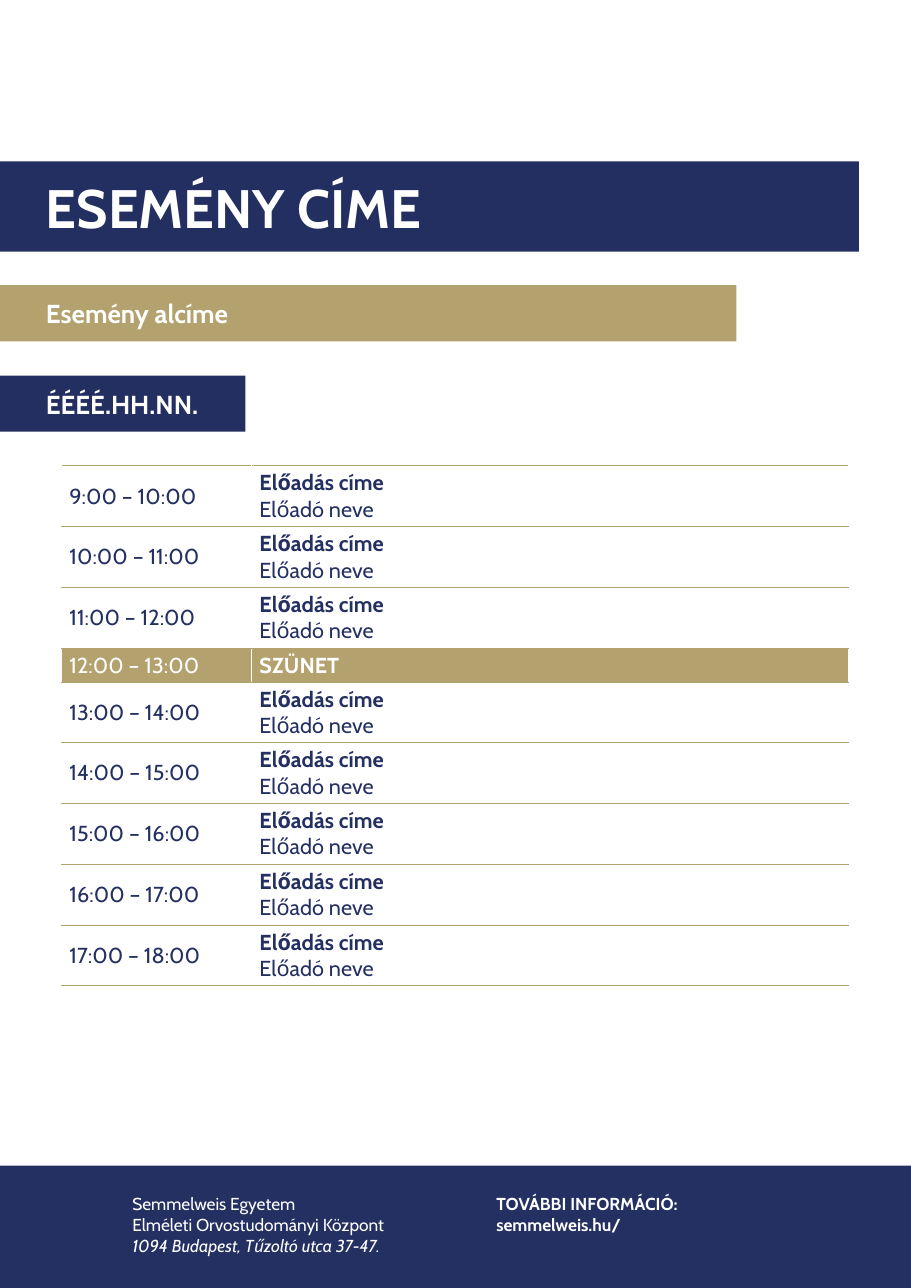
"""Build an event programme page with title bars, a timetable and a footer."""
from dataclasses import dataclass

from lxml import etree
from pptx import Presentation
from pptx.dml.color import RGBColor
from pptx.enum.shapes import MSO_SHAPE
from pptx.enum.text import MSO_ANCHOR, PP_ALIGN
from pptx.oxml.ns import qn
from pptx.util import Inches, Pt

RECT = MSO_SHAPE.RECTANGLE
MIDDLE = MSO_ANCHOR.MIDDLE
LEFT = PP_ALIGN.LEFT
NAVY = RGBColor(0x23, 0x2F, 0x61)
DEEP = RGBColor(0x24, 0x2F, 0x62)
GOLD = RGBColor(0xB3, 0xA1, 0x6E)
WHITE = RGBColor(0xFF, 0xFF, 0xFF)
FONT = "Cabin"
WIDE, TALL = 11.69, 16.53
EDGES = {"a:lnL": WHITE, "a:lnR": WHITE, "a:lnT": GOLD, "a:lnB": GOLD}


@dataclass
class Line:
    """One paragraph of text."""
    text: str
    size: int
    color: RGBColor = WHITE
    bold: bool = False
    italic: bool = False


@dataclass
class Bar:
    """A filled band starting at the left edge."""
    top: float
    width: float
    height: float
    fill: RGBColor
    line: Line | None = None


@dataclass
class Note:
    """A text block in the footer."""
    left: float
    width: float
    height: float
    lines: list[Line]


@dataclass
class Slot:
    """One row of the timetable."""
    start: int
    rest: bool = False


FOOT = Bar(14.96, WIDE, 1.57, DEEP)
BARS = [
    Bar(2.07, 11.02, 1.16, NAVY, Line("ESEMÉNY CÍME", 50, bold=True)),
    Bar(3.66, 9.45, 0.72, GOLD, Line("Esemény alcíme", 24, bold=True)),
    Bar(4.82, 3.15, 0.72, NAVY, Line("ÉÉÉÉ.HH.NN.", 24, bold=True)),
]
NOTES = [
    Note(1.6, 3.87, 0.95, [
        Line("Semmelweis Egyetem", 16),
        Line("Elméleti Orvostudományi Központ", 16),
        Line("1094 Budapest, Tűzoltó utca 37-47.", 16, italic=True),
    ]),
    Note(6.27, 3.17, 0.72, [
        Line("TOVÁBBI INFORMÁCIÓ:", 16, bold=True),
        Line("semmelweis.hu/", 16, bold=True),
    ]),
]
SLOTS = [Slot(hour, hour == 12) for hour in range(9, 18)]


def write(frame, lines: list[Line]) -> None:
    """Fill a text frame with paragraphs."""
    frame.word_wrap = True
    for i, line in enumerate(lines):
        para = frame.add_paragraph() if i else frame.paragraphs[0]
        para.alignment = LEFT
        run = para.add_run()
        run.text = line.text
        form = {"name": FONT, "size": Pt(line.size),
                "bold": line.bold, "italic": line.italic}
        for key, value in form.items():
            setattr(run.font, key, value)
        run.font.color.rgb = line.color


def draw_bar(slide, bar: Bar) -> None:
    """Draw a band and its heading."""
    shape = slide.shapes.add_shape(
        RECT, 0, Inches(bar.top), Inches(bar.width), Inches(bar.height))
    shape.shadow.inherit = False
    shape.fill.solid()
    shape.fill.fore_color.rgb = bar.fill
    shape.line.fill.background()
    if bar.line:
        frame = shape.text_frame
        form = {"margin_left": Inches(0.59), "margin_right": Inches(0.2),
                "margin_top": Inches(0.16), "margin_bottom": Inches(0.16),
                "vertical_anchor": MIDDLE}
        for key, value in form.items():
            setattr(frame, key, value)
        write(frame, [bar.line])


def draw_note(slide, note: Note) -> None:
    """Draw a footer text block."""
    box = slide.shapes.add_textbox(
        Inches(note.left), Inches(15.27), Inches(note.width), Inches(note.height))
    write(box.text_frame, note.lines)


def rule_cell(cell) -> None:
    """Give a cell its four border lines."""
    props = cell._tc.get_or_add_tcPr()
    for tag, color in EDGES.items():
        edge = etree.SubElement(props, qn(tag), w=str(Pt(1)))
        fill = etree.SubElement(edge, qn("a:solidFill"))
        etree.SubElement(fill, qn("a:srgbClr"), val=str(color))


def draw_table(slide, slots: list[Slot]) -> None:
    """Draw the timetable."""
    highs = [0.41 if slot.rest else 0.78 for slot in slots]
    table = slide.shapes.add_table(
        len(slots), 2, Inches(0.79), Inches(5.98),
        Inches(10.1), Inches(sum(highs))).table
    for key in ("first_row", "horz_banding"):
        setattr(table, key, False)
    for col, width in zip(table.columns, (2.44, 7.66)):
        col.width = Inches(width)
    for row, slot, high in zip(table.rows, slots, highs):
        row.height = Inches(high)
        color = WHITE if slot.rest else DEEP
        time = Line(f"{slot.start}:00 – {slot.start + 1}:00", 20, color)
        if slot.rest:
            talk = [Line("SZÜNET", 20, color, bold=True)]
        else:
            talk = [Line("Előadás címe", 20, color, bold=True),
                    Line("Előadó neve", 20, color)]
        for cell, lines in zip(row.cells, ([time], talk)):
            rule_cell(cell)
            cell.vertical_anchor = MIDDLE
            if slot.rest:
                cell.fill.solid()
                cell.fill.fore_color.rgb = GOLD
            else:
                cell.fill.background()
            write(cell.text_frame, lines)


def main() -> None:
    """Build and save the page."""
    deck = Presentation()
    deck.slide_width, deck.slide_height = Inches(WIDE), Inches(TALL)
    slide = deck.slides.add_slide(deck.slide_layouts[6])
    for bar in [FOOT, *BARS]:
        draw_bar(slide, bar)
    for note in NOTES:
        draw_note(slide, note)
    draw_table(slide, SLOTS)
    deck.save("out.pptx")


if __name__ == "__main__":
    main()
